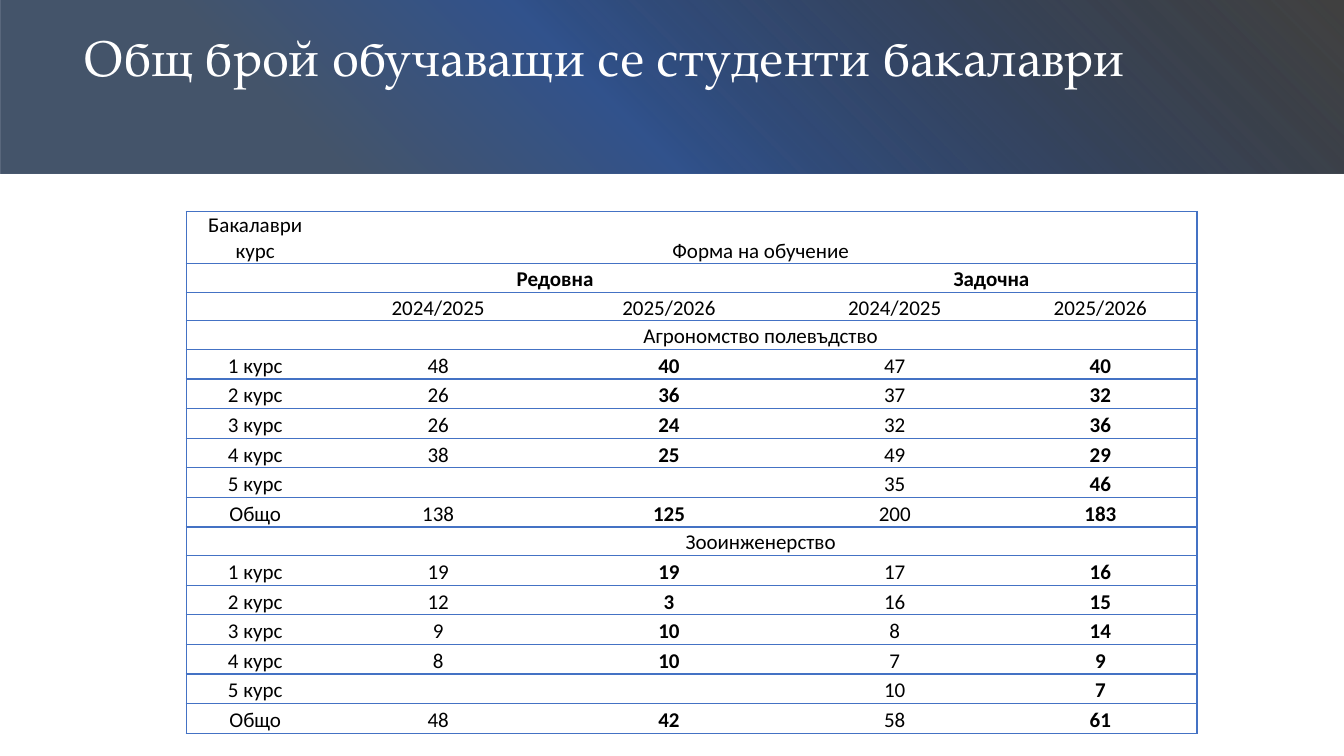
import lxml.etree
import pptx
import pptx.dml.color
import pptx.enum.shapes
import pptx.enum.text
import pptx.oxml.ns
import pptx.util

Pt = pptx.util.Pt
qn = pptx.oxml.ns.qn
ALIGN = pptx.enum.text.PP_ALIGN
ANCHOR = pptx.enum.text.MSO_ANCHOR
BLUE = "4472C4"
NO_GRID = "{2D5ABB26-0587-4C30-8999-92F81FD0307C}"

# None marks a cell joined to the one on its left
HEAD = [
    ("Бакалаври курс", "Форма на обучение", None, None, None),
    ("", "Редовна", None, "Задочна", None),
    ("", "2024/2025", "2025/2026", "2024/2025", "2025/2026"),
]
YEARS = ["1 курс", "2 курс", "3 курс", "4 курс", "5 курс", "Общо"]
MAJORS = {
    "Агрономство полевъдство": [
        (48, 40, 47, 40), (26, 36, 37, 32), (26, 24, 32, 36),
        (38, 25, 49, 29), ("", "", 35, 46), (138, 125, 200, 183),
    ],
    "Зооинженерство": [
        (19, 19, 17, 16), (12, 3, 16, 15), (9, 10, 8, 14),
        (8, 10, 7, 9), ("", "", 10, 7), (48, 42, 58, 61),
    ],
}
WIDTHS = [98.64, 162.72, 167.04, 155.52, 138.24]


def paint(code):
    return pptx.dml.color.RGBColor.from_string(code)


def add(parent, tag, **attrs):
    node = lxml.etree.SubElement(parent, qn(tag))
    for key, value in attrs.items():
        node.set(key, str(value))
    return node


def put(frame, text, size=15, font="Calibri", color="000000", bold=False,
        align=ALIGN.CENTER, space=1.0):
    para = frame.paragraphs[0]
    para.alignment = align
    para.line_spacing = space
    if not text:
        # An empty cell keeps the row low through its end mark
        add(para._p, "a:endParaRPr", sz=size * 100)
        return
    run = para.add_run()
    run.text = text
    run.font.size = Pt(size)
    run.font.name = font
    run.font.bold = bold
    run.font.color.rgb = paint(color)


def draw_band(slide, left, top, width, height):
    # The band is a tall bar turned on its side about its centre
    shift = (width - height) / 2
    band = slide.shapes.add_shape(
        pptx.enum.shapes.MSO_SHAPE.RECTANGLE,
        Pt(left + shift), Pt(top - shift), Pt(height), Pt(width))
    band.rotation = 90
    band.shadow.inherit = False
    band.line.fill.background()
    band.fill.gradient()
    band.fill.gradient_angle = 135
    stops = band._element.spPr.find(".//" + qn("a:gsLst"))
    for stop in list(stops):
        stops.remove(stop)
    for pos, code, alpha in [(23, "44546A", 100), (45, "31528C", 100),
                             (99, "000000", 74)]:
        stop = add(stops, "a:gs", pos=pos * 1000)
        tint = add(stop, "a:srgbClr", val=code)
        if alpha < 100:
            add(tint, "a:alpha", val=alpha * 1000)
    # Send the band behind the title
    slide.shapes._spTree.insert(2, band._element)


def draw_title(slide, text, left, top, width, height):
    title = slide.shapes.title
    title.left, title.top = Pt(left), Pt(top)
    title.width, title.height = Pt(width), Pt(height)
    frame = title.text_frame
    frame.auto_size = pptx.enum.text.MSO_AUTO_SIZE.NONE
    frame.vertical_anchor = ANCHOR.MIDDLE
    put(frame, text, size=36, font="TeX Gyre Pagella", color="FFFFFF",
        align=ALIGN.LEFT, space=0.9)


def style_cell(cell, sides, count):
    props = cell._tc.get_or_add_tcPr()
    for side in sides:
        line = add(props, "a:ln" + side, w=Pt(1))
        add(add(line, "a:solidFill"), "a:srgbClr", val=BLUE)
    cell.fill.solid()
    cell.fill.fore_color.rgb = paint("FFFFFF")
    cell.vertical_anchor = ANCHOR.TOP if count else ANCHOR.BOTTOM
    cell.margin_left = cell.margin_right = Pt(5 if count else 0.7)
    cell.margin_top = Pt(0 if count else 0.7)
    cell.margin_bottom = Pt(0)


def draw_table(slide, left, top, width, height):
    rows = list(HEAD)
    for major, counts in MAJORS.items():
        rows.append(("", major, None, None, None))
        rows += [(year, *nums) for year, nums in zip(YEARS, counts)]
    last = len(WIDTHS) - 1
    shape = slide.shapes.add_table(len(rows), len(WIDTHS), Pt(left), Pt(top),
                                   Pt(width), Pt(height))
    table = shape.table
    table._tbl.tblPr.find(qn("a:tableStyleId")).text = NO_GRID
    table.first_row = table.horz_banding = False
    for col, size in zip(table.columns, WIDTHS):
        col.width = Pt(size)
    for r, row in enumerate(rows):
        data = row[0] in YEARS
        table.rows[r].height = Pt(37 if r == 0 else 21 if data else 20.4)
        for c, value in enumerate(row):
            cell = table.cell(r, c)
            count = data and c in (2, 4) and value != ""
            sides = ["L"] * (c == 0) + ["R"] * (c == last) + ["T", "B"]
            style_cell(cell, sides, count)
            put(cell.text_frame, "" if value is None else str(value),
                bold=count or r == 1, space=1.15 if count else 1.0)
        # Join each heading with the blanks on its right
        for c, value in enumerate(row):
            end = c
            while end < last and row[end + 1] is None:
                end += 1
            if value is not None and end > c:
                cell = table.cell(r, c)
                cell.merge(table.cell(r, end))
                if end == last:
                    # The joined cell carries the right edge
                    line = lxml.etree.Element(qn("a:lnR"), w=str(Pt(1)))
                    add(add(line, "a:solidFill"), "a:srgbClr", val=BLUE)
                    cell._tc.tcPr.insert(0, line)


def main():
    deck = pptx.Presentation()
    deck.slide_width, deck.slide_height = Pt(960), Pt(540)
    slide = deck.slides.add_slide(deck.slide_layouts[5])
    draw_band(slide, 0, 0, 960, 124)
    draw_title(slide, "Общ брой обучаващи се студенти бакалаври",
               52.5, 10, 828, 66)
    draw_table(slide, 133, 151, sum(WIDTHS), 367)
    deck.save("out.pptx")


if __name__ == "__main__":
    main()
